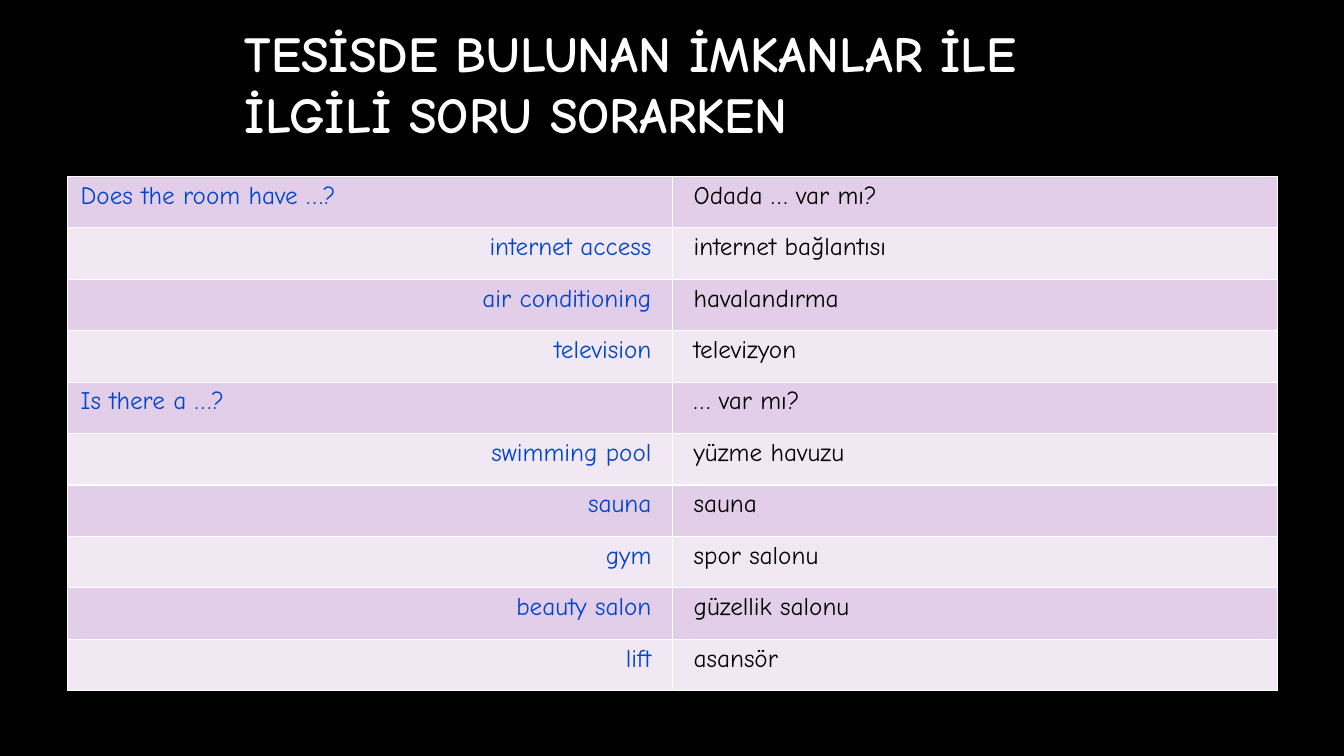
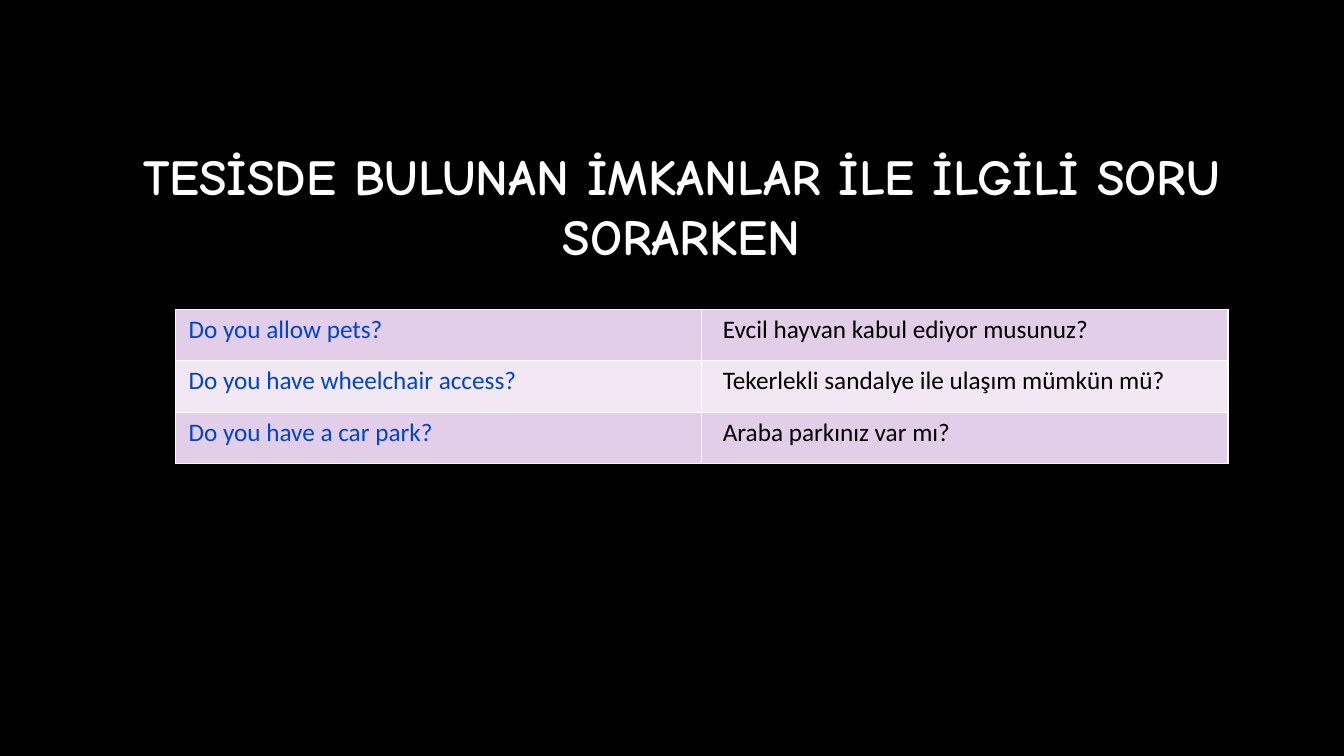
from dataclasses import dataclass

from lxml import etree
from pptx import Presentation
from pptx import util as u
from pptx.dml import color
from pptx.enum import text
from pptx.oxml import ns


@dataclass(frozen=True)
class Theme:
    background: str = "000000"
    title: str = "FFFFFF"
    english: str = "0044CC"
    turkish: str = "000000"
    border: str = "FFFFFF"
    bands: tuple = ("E3CEE9", "F1E8F4")
    display_font: str = "Comic Neue"
    plain_font: str = "Calibri"
    title_size: int = 36
    cell_size: int = 18
    border_width: int = 1


THEME = Theme()
ALIGN = text.PP_ALIGN
TITLE = "TESİSDE BULUNAN İMKANLAR İLE İLGİLİ SORU SORARKEN"

FACILITIES = [
    ("Does the room have …?", "Odada … var mı?"),
    ("internet access", "internet bağlantısı"),
    ("air conditioning", "havalandırma"),
    ("television", "televizyon"),
    ("Is there a …?", "… var mı?"),
    ("swimming pool", "yüzme havuzu"),
    ("sauna", "sauna"),
    ("gym", "spor salonu"),
    ("beauty salon", "güzellik salonu"),
    ("lift", "asansör"),
]
POLICIES = [
    ("Do you allow pets?", "Evcil hayvan kabul ediyor musunuz?"),
    ("Do you have wheelchair access?",
     "Tekerlekli sandalye ile ulaşım mümkün mü?"),
    ("Do you have a car park?", "Araba parkınız var mı?"),
]


def rgb(value):
    return color.RGBColor.from_string(value)


def write(tf, words, *, font, size, ink, bold=False, align=ALIGN.LEFT):
    tf.word_wrap = True
    p = tf.paragraphs[0]
    p.alignment = align
    r = p.add_run()
    r.text = words
    r.font.name = font
    r.font.size = u.Pt(size)
    r.font.bold = bold
    r.font.color.rgb = rgb(ink)


class Deck:
    def __init__(self, theme):
        self.theme = theme
        self.prs = Presentation()
        self.prs.slide_width = u.Inches(13.33)
        self.prs.slide_height = u.Inches(7.5)
        self.s = None

    def slide(self):
        self.s = self.prs.slides.add_slide(self.prs.slide_layouts[6])
        fill = self.s.background.fill
        fill.solid()
        fill.fore_color.rgb = rgb(self.theme.background)

    def title(self, words, box, align=ALIGN.LEFT):
        sp = self.s.shapes.add_textbox(*map(u.Inches, box))
        sp.text_frame.vertical_anchor = text.MSO_ANCHOR.MIDDLE
        write(sp.text_frame, words, font=self.theme.display_font,
              size=self.theme.title_size, ink=self.theme.title,
              bold=True, align=align)

    def phrases(self, rows, left, top, width, row_height, font):
        frame = self.s.shapes.add_table(
            len(rows), 2, u.Inches(left), u.Inches(top),
            u.Inches(width), u.Inches(row_height * len(rows)))
        table = frame.table
        table.first_row = False
        table.horz_banding = False
        for column in table.columns:
            column.width = u.Inches(width / 2)
        for i, (english, turkish) in enumerate(rows):
            band = self.theme.bands[i % 2]
            is_question = english.endswith("?")
            self.cell(table.cell(i, 0), english, band, font,
                      self.theme.english, 0.13 if is_question else 0.35, 0.21,
                      ALIGN.LEFT if is_question else ALIGN.RIGHT)
            self.cell(table.cell(i, 1), turkish, band, font,
                      self.theme.turkish, 0.21, 0.13, ALIGN.LEFT)

    def cell(self, cell, words, band, font, ink, left, right, align):
        cell.margin_left, cell.margin_right = u.Inches(left), u.Inches(right)
        cell.margin_top, cell.margin_bottom = u.Inches(0.05), u.Inches(0.16)
        cell.fill.solid()
        cell.fill.fore_color.rgb = rgb(band)
        self.borders(cell)
        write(cell.text_frame, words, font=font, size=self.theme.cell_size,
              ink=ink, align=align)

    def borders(self, cell):
        tc_pr = cell._tc.get_or_add_tcPr()
        for i, side in enumerate(("lnL", "lnR", "lnT", "lnB")):
            line = etree.Element(ns.qn(f"a:{side}"),
                                 w=str(u.Pt(self.theme.border_width)))
            fill = etree.SubElement(line, ns.qn("a:solidFill"))
            etree.SubElement(fill, ns.qn("a:srgbClr"), val=self.theme.border)
            tc_pr.insert(i, line)


def main():
    deck = Deck(THEME)

    deck.slide()
    deck.title(TITLE, (2.33, 0.17, 8.45, 1.3))
    deck.phrases(FACILITIES, 0.67, 1.75, 12, 0.49, THEME.display_font)

    deck.slide()
    deck.title(TITLE, (1.22, 1.24, 11.08, 1.59), ALIGN.CENTER)
    deck.phrases(POLICIES, 1.74, 3.07, 10.44, 0.51, THEME.plain_font)

    deck.prs.save("out.pptx")


if __name__ == "__main__":
    main()
